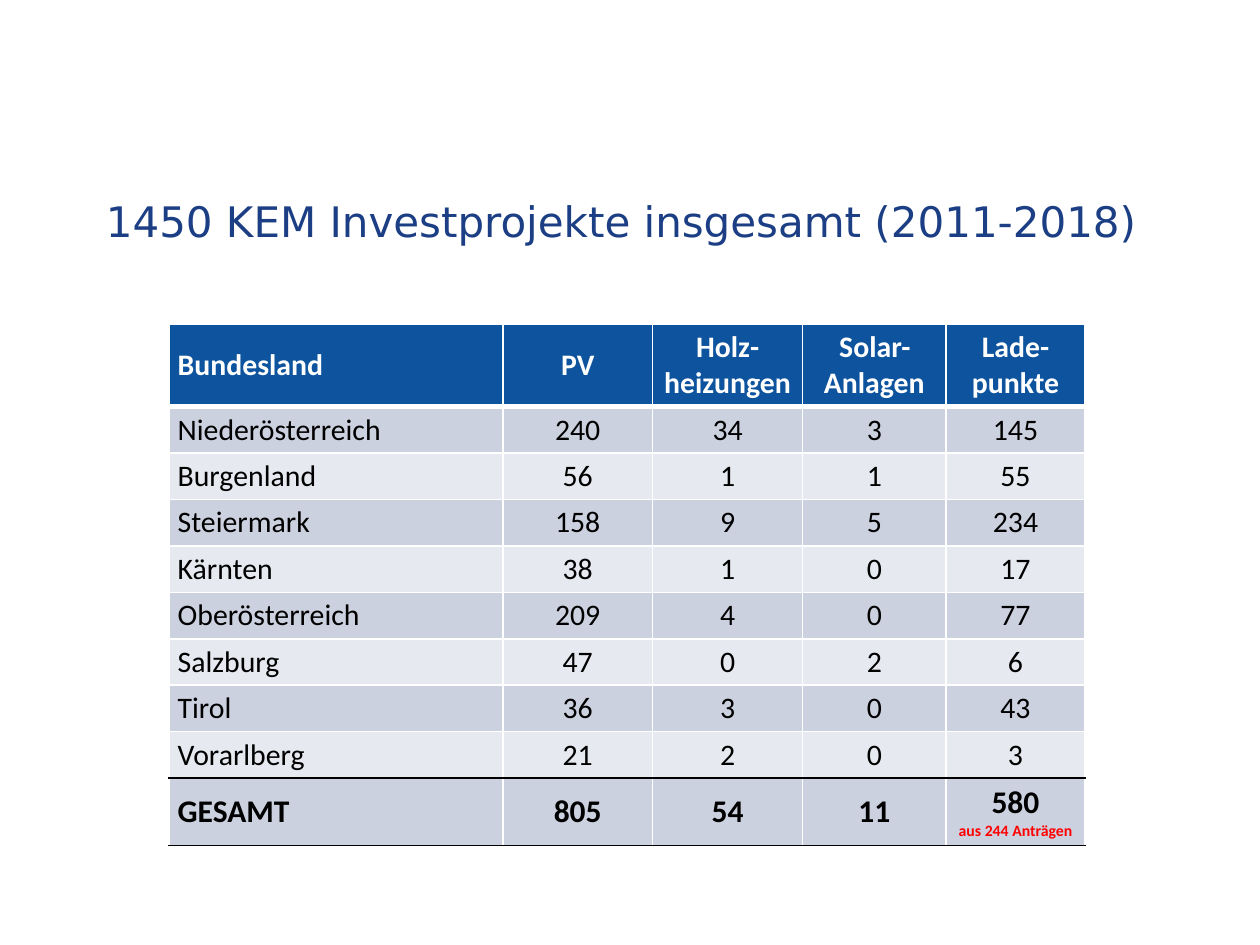
from lxml import etree
from pptx import Presentation
from pptx import util as u
from pptx.dml.color import RGBColor
from pptx.enum import text
from pptx.oxml.ns import qn

BLUE, NAVY, WHITE, BLACK, RED = "0D539E", "1B3E84", "FFFFFF", "000000", "FF0000"
BANDS = "CCD1DF", "E7E9F0"
WIDTHS = 2.65, 1.19, 1.19, 1.14, 1.1
HEIGHTS = [0.64] + [0.364] * 8 + [0.53]
NOTE = "aus 244 Anträgen"
ROWS = [
    ("Bundesland", "PV", "Holz-heizungen", "Solar-Anlagen", "Lade- punkte"),
    ("Niederösterreich", 240, 34, 3, 145),
    ("Burgenland", 56, 1, 1, 55),
    ("Steiermark", 158, 9, 5, 234),
    ("Kärnten", 38, 1, 0, 17),
    ("Oberösterreich", 209, 4, 0, 77),
    ("Salzburg", 47, 0, 2, 6),
    ("Tirol", 36, 3, 0, 43),
    ("Vorarlberg", 21, 2, 0, 3),
    ("GESAMT", 805, 54, 11, 580),
]


def color(code):
    return RGBColor.from_string(code)


def write(para, words, size, code, bold=False, face="Calibri"):
    run = para.add_run()
    run.text = str(words)
    font = run.font
    font.name, font.size, font.bold = face, u.Pt(size), bold
    font.color.rgb = color(code)


def border(cell, side, code, width=1):
    line = etree.SubElement(cell._tc.get_or_add_tcPr(), qn("a:ln" + side), w=str(u.Pt(width)))
    fill = etree.SubElement(line, qn("a:solidFill"))
    etree.SubElement(fill, qn("a:srgbClr"), val=code)


def title(slide, box):
    head = slide.shapes.title
    head.left, head.top, head.width, head.height = map(u.Inches, box)
    frame = head.text_frame
    frame.word_wrap = True
    frame.auto_size = text.MSO_AUTO_SIZE.NONE
    frame.vertical_anchor = text.MSO_ANCHOR.MIDDLE
    para = frame.paragraphs[0]
    para.alignment = text.PP_ALIGN.LEFT
    write(para, "1450 KEM Investprojekte insgesamt (2011-2018)", 24, NAVY, face="DejaVu Sans")


def style(cell, row):
    """Draw the borders, then the fill: the XML needs them in this order."""
    last = len(ROWS) - 1
    border(cell, "L", WHITE)
    border(cell, "R", WHITE)
    border(cell, "T", BLACK if row == last else WHITE, 3 if row == 1 else 1)
    border(cell, "B", BLACK if row >= last - 1 else WHITE, 3 if row == 0 else 1)
    cell.fill.solid()
    cell.fill.fore_color.rgb = color(BANDS[(row - 1) % 2] if row else BLUE)
    cell.vertical_anchor = text.MSO_ANCHOR.MIDDLE
    cell.margin_left = cell.margin_right = u.Inches(0.07)
    cell.margin_top = cell.margin_bottom = u.Inches(0.04)


def totals(slide, left, top):
    """Place the table of projects by state."""
    grid = slide.shapes.add_table(
        len(ROWS), len(WIDTHS), u.Inches(left), u.Inches(top),
        u.Inches(sum(WIDTHS)), u.Inches(sum(HEIGHTS))).table
    for col, width in zip(grid.columns, WIDTHS):
        col.width = u.Inches(width)
    for row, height in zip(grid.rows, HEIGHTS):
        row.height = u.Inches(height)
    last = len(ROWS) - 1
    for r, values in enumerate(ROWS):
        for c, value in enumerate(values):
            cell = grid.cell(r, c)
            style(cell, r)
            para = cell.text_frame.paragraphs[0]
            write(para, value, 18 if r == last else 17, BLACK if r else WHITE, r in (0, last))
            if c:
                para.alignment = text.PP_ALIGN.CENTER
    note = grid.cell(last, len(WIDTHS) - 1).text_frame.add_paragraph()
    note.alignment = text.PP_ALIGN.CENTER
    write(note, NOTE, 9, RED, True)


def main():
    deck = Presentation()
    deck.slide_width, deck.slide_height = u.Inches(10), u.Inches(7.5)
    slide = deck.slides.add_slide(deck.slide_layouts[5])
    totals(slide, 1.34, 2.57)
    title(slide, (0.74, 1.34, 8.72, 0.82))
    deck.save("out.pptx")


if __name__ == "__main__":
    main()
